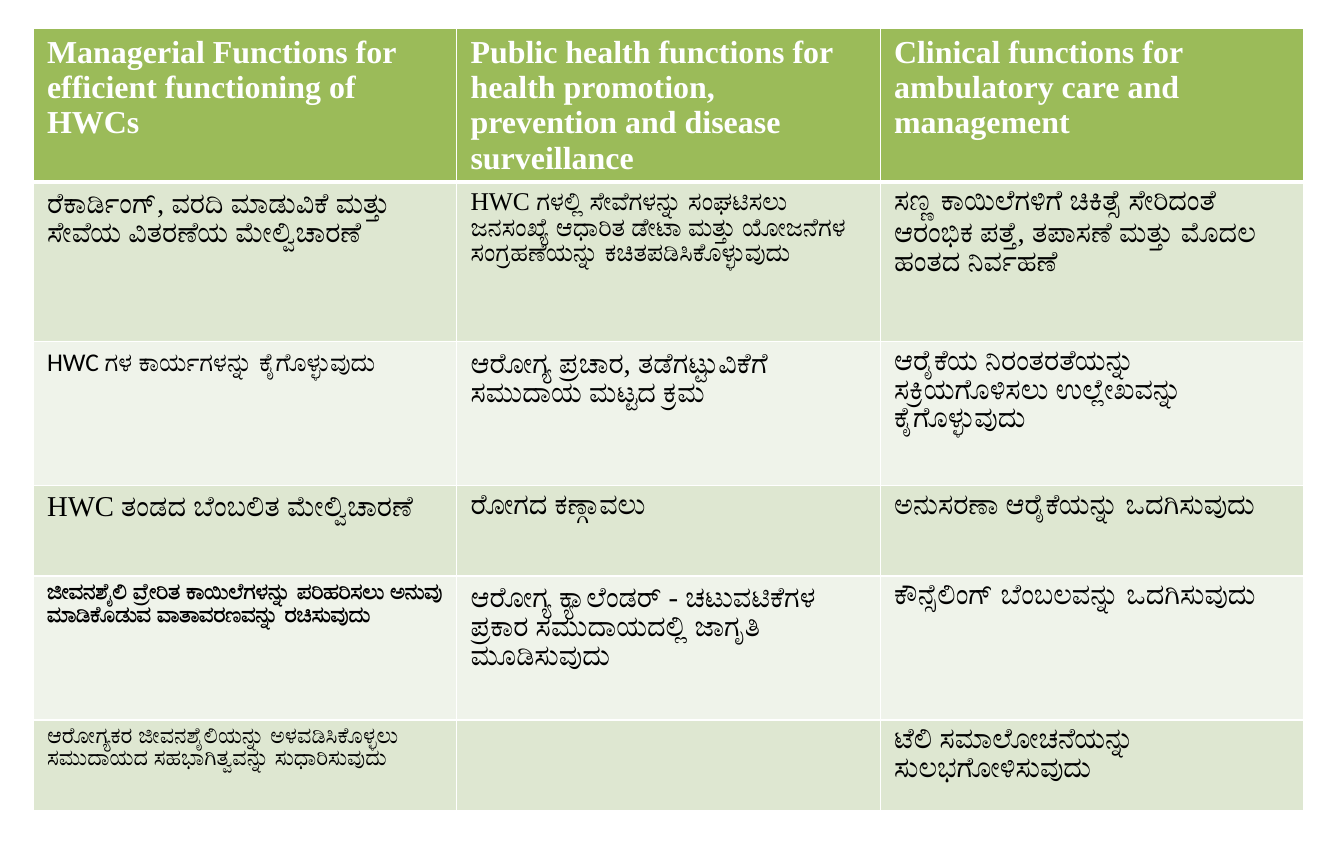
from lxml import etree
from pptx import Presentation
from pptx.dml.color import RGBColor
from pptx.oxml.ns import qn
from pptx.util import Inches, Pt

COLORS = {"header": "9BBB59", "odd": "DEE7D1", "even": "EFF3EA",
          "line": "FFFFFF", "header_text": "FFFFFF", "text": "000000"}
SLIDE_SIZE = (11.7, 7.5)
TABLE_BOX = (0.29, 0.25, 11.06, 7.01)
ROW_HEIGHTS = [1.02, 1.39, 1.25, 0.79, 1.25, 0.79]

FUNCTIONS = [
    ["Managerial Functions for efficient functioning of HWCs",
     "Public health functions for health promotion, prevention and disease surveillance",
     "Clinical functions for ambulatory care and management"],
    ["ರೆಕಾರ್ಡಿಂಗ್, ವರದಿ ಮಾಡುವಿಕೆ ಮತ್ತು ಸೇವೆಯ ವಿತರಣೆಯ ಮೇಲ್ವಿಚಾರಣೆ",
     "HWC ಗಳಲ್ಲಿ ಸೇವೆಗಳನ್ನು ಸಂಘಟಿಸಲು ಜನಸಂಖ್ಯೆ ಆಧಾರಿತ ಡೇಟಾ ಮತ್ತು ಯೋಜನೆಗಳ ಸಂಗ್ರಹಣೆಯನ್ನು ಕಚಿತಪಡಿಸಿಕೊಳ್ಳುವುದು",
     "ಸಣ್ಣ ಕಾಯಿಲೆಗಳಿಗೆ ಚಿಕಿತ್ಸೆ ಸೇರಿದಂತೆ ಆರಂಭಿಕ ಪತ್ತೆ, ತಪಾಸಣೆ ಮತ್ತು ಮೊದಲ ಹಂತದ ನಿರ್ವಹಣೆ"],
    ["HWC ಗಳ ಕಾರ್ಯಗಳನ್ನು ಕೈಗೊಳ್ಳುವುದು",
     "ಆರೋಗ್ಯ ಪ್ರಚಾರ, ತಡೆಗಟ್ಟುವಿಕೆಗೆ ಸಮುದಾಯ ಮಟ್ಟದ ಕ್ರಮ",
     "ಆರೈಕೆಯ ನಿರಂತರತೆಯನ್ನು ಸಕ್ರಿಯಗೊಳಿಸಲು ಉಲ್ಲೇಖವನ್ನು ಕೈಗೊಳ್ಳುವುದು"],
    ["HWC ತಂಡದ ಬೆಂಬಲಿತ ಮೇಲ್ವಿಚಾರಣೆ",
     "ರೋಗದ ಕಣ್ಗಾವಲು",
     "ಅನುಸರಣಾ ಆರೈಕೆಯನ್ನು ಒದಗಿಸುವುದು"],
    ["ಜೀವನಶೈಲಿ ಪ್ರೇರಿತ ಕಾಯಿಲೆಗಳನ್ನು ಪರಿಹರಿಸಲು ಅನುವು ಮಾಡಿಕೊಡುವ ವಾತಾವರಣವನ್ನು ರಚಿಸುವುದು",
     "ಆರೋಗ್ಯ ಕ್ಯಾಲೆಂಡರ್ - ಚಟುವಟಿಕೆಗಳ ಪ್ರಕಾರ ಸಮುದಾಯದಲ್ಲಿ ಜಾಗೃತಿ ಮೂಡಿಸುವುದು",
     "ಕೌನ್ಸೆಲಿಂಗ್ ಬೆಂಬಲವನ್ನು ಒದಗಿಸುವುದು"],
    ["ಆರೋಗ್ಯಕರ ಜೀವನಶೈಲಿಯನ್ನು ಅಳವಡಿಸಿಕೊಳ್ಳಲು ಸಮುದಾಯದ ಸಹಭಾಗಿತ್ವವನ್ನು ಸುಧಾರಿಸುವುದು",
     "",
     "ಟೆಲಿ ಸಮಾಲೋಚನೆಯನ್ನು ಸುಲಭಗೋಳಿಸುವುದು"],
]

# Text styles: size, font, bold; the exceptions are keyed by row and column
HEADER_STYLE = (20, "Times New Roman", True)
BODY_STYLE = (18, "Times New Roman", False)
SPECIAL_STYLES = {
    (1, 1): (16, "Times New Roman", False),
    (2, 0): (16, "Calibri", False),
    (4, 0): (14, "Times New Roman", True),
    (5, 0): (14, "Times New Roman", False),
}


def add_borders(cell, row):
    """Rule all four sides, with a thick line under the header."""
    properties = cell._tc.get_or_add_tcPr()
    widths = {"lnL": 1, "lnR": 1, "lnT": 3 if row == 1 else 1,
              "lnB": 3 if row == 0 else 1}
    for position, (side, width) in enumerate(widths.items()):
        line = etree.Element(qn(f"a:{side}"), w=str(Pt(width)))
        fill = etree.SubElement(line, qn("a:solidFill"))
        etree.SubElement(fill, qn("a:srgbClr"), val=COLORS["line"])
        properties.insert(position, line)


def format_cell(cell, row, column, text):
    # Fill, margins and borders
    band = "header" if row == 0 else "odd" if row % 2 else "even"
    cell.fill.solid()
    cell.fill.fore_color.rgb = RGBColor.from_string(COLORS[band])
    cell.margin_left = cell.margin_right = Inches(0.12)
    cell.margin_top = cell.margin_bottom = Inches(0.05)
    add_borders(cell, row)

    # Text
    if not text:
        return
    run = cell.text_frame.paragraphs[0].add_run()
    run.text = text
    default = HEADER_STYLE if row == 0 else BODY_STYLE
    size, name, bold = SPECIAL_STYLES.get((row, column), default)
    run.font.size, run.font.name, run.font.bold = Pt(size), name, bold
    color = COLORS["header_text" if row == 0 else "text"]
    run.font.color.rgb = RGBColor.from_string(color)


def add_functions_table(slide, box):
    left, top, width, height = map(Inches, box)
    shape = slide.shapes.add_table(len(FUNCTIONS), len(FUNCTIONS[0]),
                                   left, top, width, height)
    table = shape.table
    for column in table.columns:
        column.width = width // len(table.columns)
    for row, row_height in zip(table.rows, ROW_HEIGHTS):
        row.height = Inches(row_height)
    for row, texts in enumerate(FUNCTIONS):
        for column, text in enumerate(texts):
            format_cell(table.cell(row, column), row, column, text)
    shape.height = height


def main():
    presentation = Presentation()
    presentation.slide_width, presentation.slide_height = map(Inches, SLIDE_SIZE)
    blank_layout = presentation.slide_layouts[6]
    slide = presentation.slides.add_slide(blank_layout)
    add_functions_table(slide, TABLE_BOX)
    presentation.save("out.pptx")


if __name__ == "__main__":
    main()
